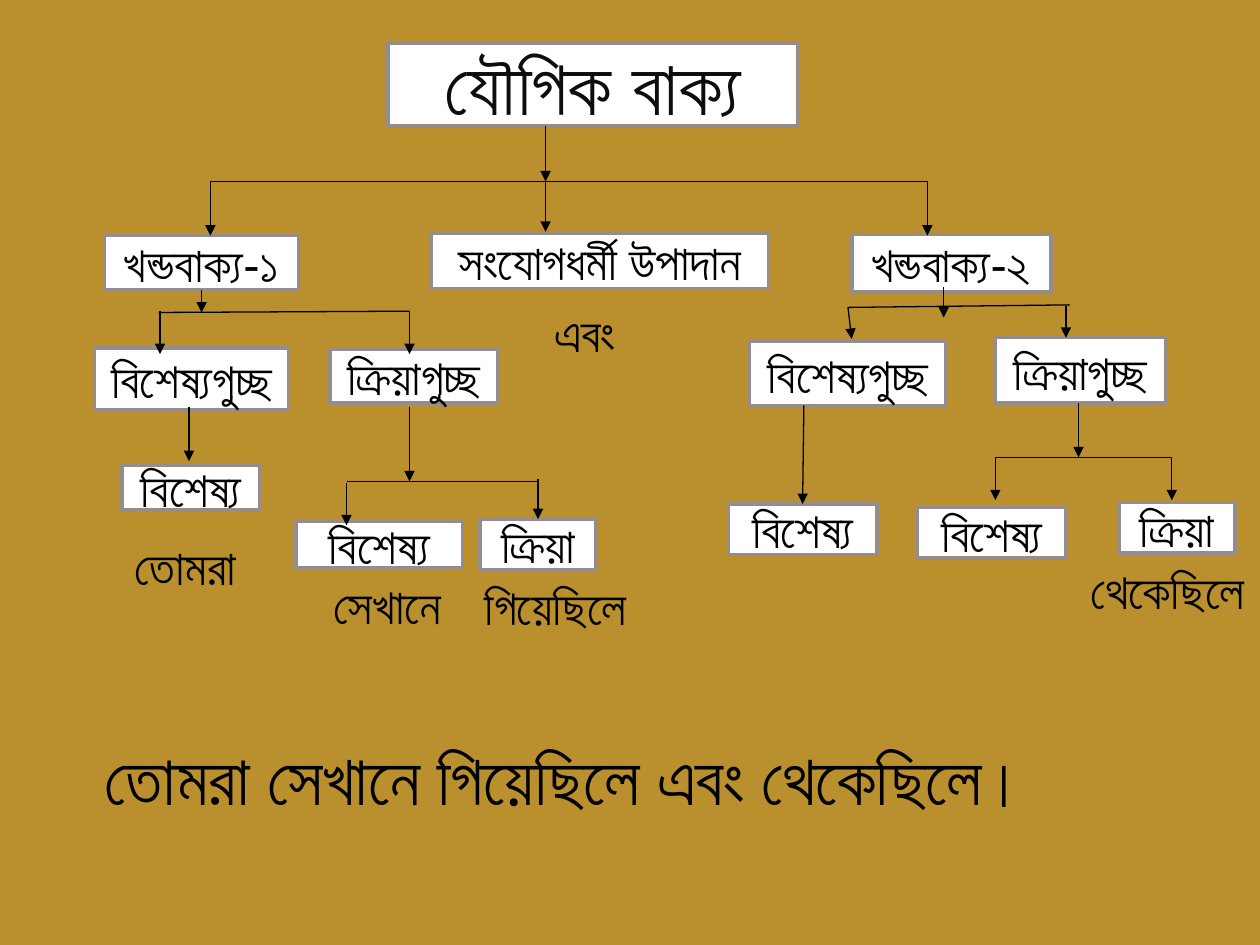
from lxml import etree
from pptx import Presentation, util as u
from pptx.dml.color import RGBColor
from pptx.enum import shapes, text
from pptx.oxml.ns import qn

GOLD = RGBColor(0xBA, 0x8F, 0x2D)
WHITE = RGBColor(0xFF, 0xFF, 0xFF)
GREY = RGBColor(0x96, 0x8C, 0x8C)
INK = RGBColor(0x0D, 0x0D, 0x0D)
BLACK = RGBColor(0, 0, 0)
FONT = "Arial"

# Slide grid: 100 columns by 75 rows of square cells
COLS, ROWS = 100, 75
CELL = u.Inches(0.1)

# The letter yya as one character, and as ya with a dot
YYA = chr(0x9DF)
YA_DOT = chr(0x9AF) + chr(0x9BC)

NP, VP, NOUN, VERB = "বিশেষ্যগুচ্ছ", "ক্রিয়াগুচ্ছ", "বিশেষ্য", "ক্রিয়া"

# name: (text, column, row, columns wide, rows high)
BOXES = {
    "clause1": ("খন্ডবাক্য-১", 8.3, 18.7, 15.4, 4.3),
    "joiner": ("সংযোগধর্মী উপাদান", 34.2, 18.5, 26.8, 4.4),
    "clause2": ("খন্ডবাক্য-২", 67.6, 18.6, 15.8, 4.6),
    "np1": (NP, 7.5, 27.6, 15.4, 4.9),
    "vp1": (VP, 26.2, 27.7, 13.3, 4.3),
    "np2": (NP, 59.5, 27.1, 15.6, 5.1),
    "vp2": (VP, 79, 26.8, 13.5, 5.2),
    "noun1": (NOUN, 9.7, 36.9, 10.9, 3.6),
    "noun2": (NOUN, 23.5, 41.4, 13.2, 3.7),
    "verb1": (VERB, 38.1, 41.2, 9.2, 4),
    "noun3": (NOUN, 57.8, 40, 11.8, 4),
    "noun4": (NOUN, 72.8, 40.3, 11.8, 4),
    "verb2": (VERB, 88.8, 39.9, 9.2, 4),
}

# text, column, row, columns wide
WORDS = [
    ("তোমরা", 9.7, 42.1, 10.9),
    ("গিয়েছিলে", 37.5, 45.3, 14.8),
    ("সেখানে", 25.5, 45.2, 14.8),
    ("থেকেছিলে", 85.6, 44, 14.8),
    ("এবং", 43, 23.6, 14.8),
]

# from column, row, to column, row
BARS = [
    (16.7, 14.4, 73.6, 14.4),
    (12.6, 24.8, 32.5, 24.7),
    (67.3, 24.4, 84.9, 24.2),
    (27.5, 38.2, 42.7, 38.2),
    (79, 36.3, 93, 36.3),
]

# from column, row, to column, row, box above, box below
ARROWS = [
    (43.3, 10, 43.3, 14.4, None, None),
    (16.7, 14.4, 16.7, 18.7, None, None),
    (43.3, 14.4, 43.3, 18.4, None, None),
    (73.6, 14.4, 73.6, 18.7, None, None),
    (16, 23, 16, 24.8, "clause1", None),
    (12.7, 24.7, 12.7, 28.1, None, None),
    (32.5, 24.7, 32.5, 28.1, None, None),
    (74.9, 22.8, 74.9, 25.2, None, None),
    (67.3, 24.4, 67.6, 26.9, None, None),
    (84.6, 24.3, 84.6, 26.8, None, None),
    (15, 32.3, 15, 36.6, None, None),
    (32.5, 32.3, 32.5, 38.2, None, None),
    (27.5, 38.3, 27.5, 41.7, None, None),
    (42.7, 38, 42.7, 41.4, None, "verb1"),
    (63.8, 32.2, 63.6, 40, None, "noun3"),
    (85.6, 32, 85.6, 36.3, None, None),
    (79, 36.3, 79, 39.7, None, None),
    (93, 36.3, 93, 39.7, None, None),
]


def grid(*cells):
    return [round(n * CELL) for n in cells]


def write(frame, words, size, color=BLACK, bold=None):
    frame.word_wrap = True
    frame.text = words.replace(YA_DOT, YYA)
    font = frame.paragraphs[0].runs[0].font
    font.name, font.size, font.bold = FONT, u.Pt(size), bold
    font.color.rgb = color


def box(slide, words, *place, size=28, color=BLACK, bold=None):
    node = slide.shapes.add_shape(
        shapes.MSO_SHAPE.FLOWCHART_PROCESS, *grid(*place))
    node.shadow.inherit = False
    node.fill.solid()
    node.fill.fore_color.rgb = WHITE
    node.line.color.rgb = GREY
    node.line.width = u.Pt(2)
    write(node.text_frame, words, size, color, bold)
    node.text_frame.vertical_anchor = text.MSO_ANCHOR.MIDDLE
    node.text_frame.paragraphs[0].alignment = text.PP_ALIGN.CENTER
    return node


def label(slide, words, *place, size=28):
    note = slide.shapes.add_textbox(*grid(*place))
    write(note.text_frame, words, size)
    note.text_frame.auto_size = text.MSO_AUTO_SIZE.SHAPE_TO_FIT_TEXT
    return note


def line(slide, *ends):
    rule = slide.shapes.add_connector(
        shapes.MSO_CONNECTOR.STRAIGHT, *grid(*ends))
    rule.line.color.rgb = BLACK
    rule.line.width = u.Pt(0.75)
    etree.SubElement(rule._element.spPr, qn("a:effectLst"))
    return rule


def arrow(slide, *ends, above=None, below=None):
    """Draw an arrow, joined to the boxes above and below where given."""
    rule = line(slide, *ends)
    tip = etree.SubElement(rule.line._get_or_add_ln(), qn("a:tailEnd"))
    tip.set("type", "triangle")
    if above is not None:
        rule.begin_connect(above, 2)
    if below is not None:
        rule.end_connect(below, 0)


def main():
    prs = Presentation()
    prs.slide_width, prs.slide_height = grid(COLS, ROWS)
    slide = prs.slides.add_slide(prs.slide_layouts[6])
    slide.background.fill.solid()
    slide.background.fill.fore_color.rgb = GOLD

    box(slide, "যৌগিক বাক্য", 30.8, 3.4, 32.5, 6.6,
        size=44, color=INK, bold=True)
    nodes = {name: box(slide, *row) for name, row in BOXES.items()}
    for row in WORDS:
        label(slide, *row, 5.7)
    whole = label(slide, "তোমরা সেখানে গিয়েছিলে এবং থেকেছিলে।",
                  5.9, 57.9, 87.5, 7.7, size=40)
    whole.text_frame.margin_left = u.Inches(0.24)

    for ends in BARS:
        line(slide, *ends)
    for *ends, above, below in ARROWS:
        arrow(slide, *ends, above=nodes.get(above), below=nodes.get(below))
    prs.save("out.pptx")


if __name__ == "__main__":
    main()
